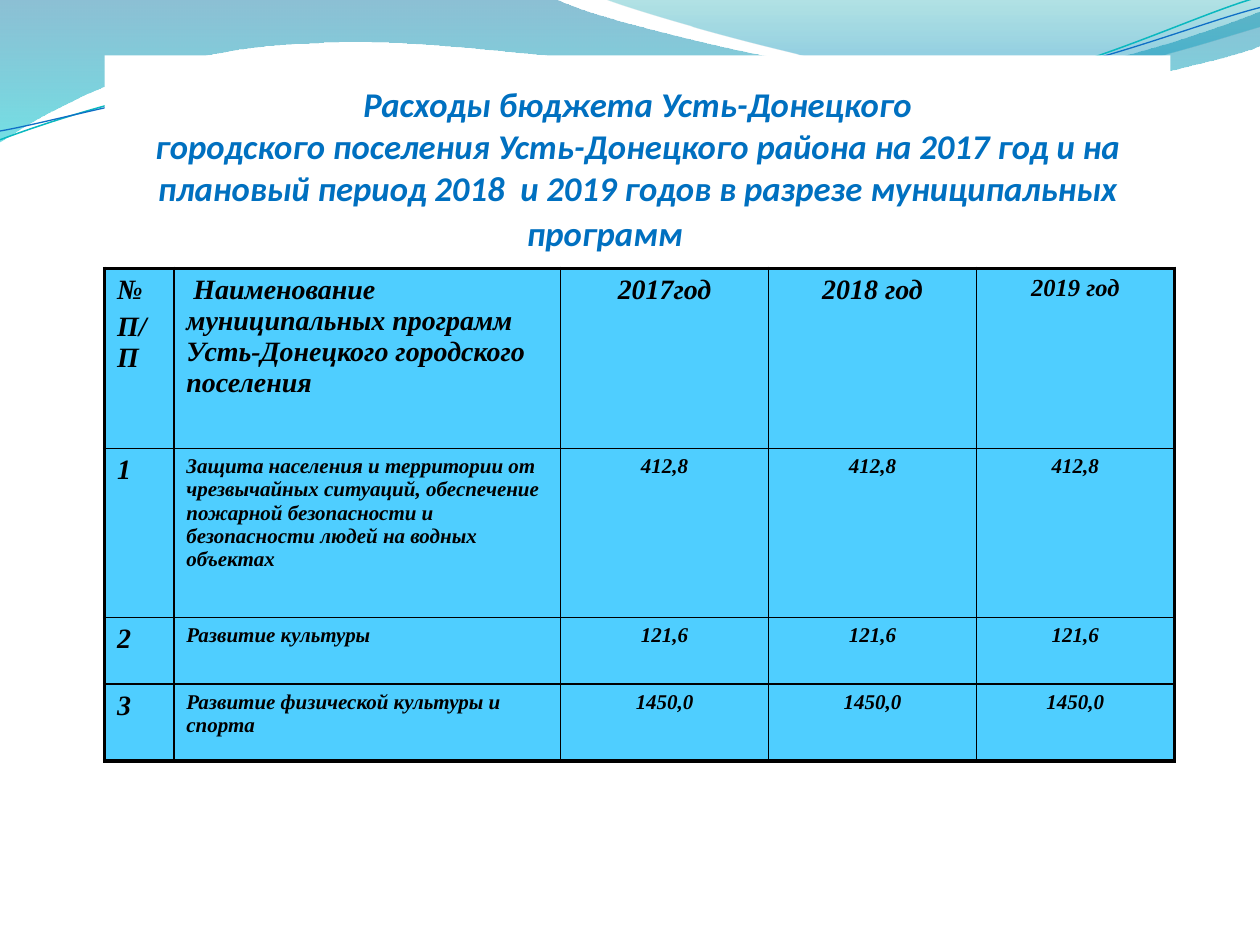
from dataclasses import dataclass

from pptx import Presentation
from pptx.dml.color import RGBColor as Color
from pptx.enum.text import MSO_ANCHOR as Anchor
from pptx.enum.text import MSO_AUTO_SIZE as AutoSize
from pptx.enum.text import PP_ALIGN as Align
from pptx.oxml.ns import qn
from pptx.oxml.xmlchemy import OxmlElement as Node
from pptx.util import Inches, Pt


@dataclass(frozen=True)
class Theme:
    white: str = "FFFFFF"
    black: str = "000000"
    title: str = "0070C0"
    cell: str = "4FCEFF"
    teal_line: str = "0AB8BF"
    blue_line: str = "0F6FC6"
    title_font: str = "Calibri"
    table_font: str = "Times New Roman"
    title_size: float = 19.8
    head_size: float = 16
    last_head_size: float = 14
    body_size: float = 12
    thin: float = 1
    thick: float = 2.25


THEME = Theme()

LARGE_WAVE = [
    [(0, 0)],
    [(4.4, -0.01)],
    [(4.76, 0.17), (6.64, 0.63), (7.58, 0.63)],
    [(8.53, 0.63), (9.58, 0.26), (10, 0.09)],
    [(10.01, 0.36)],
    [(9.83, 0.44), (8.7, 0.76), (7.46, 0.75)],
    [(6.22, 0.75), (3.82, 0.28), (2.57, 0.34)],
    [(1.29, 0.36), (0.46, 0.83), (-0.01, 1.13)],
]
RIGHT_WAVE = [
    [(4.79, -0.01)],
    [(5.09, 0.11), (6.82, 0.62), (7.69, 0.65)],
    [(8.56, 0.69), (9.61, 0.32), (10, 0.21)],
    [(10, 0)],
]
TEAL_CURVE = [
    [(0, 1.11)],
    [(0.48, 0.93), (1.58, 0.57), (2.77, 0.52)],
    [(3.95, 0.47), (5.93, 0.89), (7.13, 0.8)],
    [(8.33, 0.71), (9.38, 0.15), (9.98, -0.02)],
]
BLUE_CURVE = [
    [(0, 1.04)],
    [(0.47, 0.96), (1.64, 0.61), (2.83, 0.56)],
    [(4.03, 0.51), (5.97, 0.84), (7.17, 0.75)],
    [(8.36, 0.67), (9.41, 0.21), (10, 0.06)],
]

TITLE_LINES = [
    "Расходы бюджета Усть-Донецкого",
    "городского поселения Усть-Донецкого района на 2017 год и на "
    "плановый период 2018  и 2019 годов в разрезе муниципальных",
]
TITLE_END = "программ"

HEADINGS = [
    "№\nП/П",
    " Наименование муниципальных программ Усть-Донецкого городского поселения",
    "2017год",
    "2018 год",
    "2019 год",
]
PROGRAMS = [
    ("Защита населения и территории от чрезвычайных ситуаций, обеспечение "
     "пожарной безопасности и безопасности людей на водных объектах", "412,8"),
    ("Развитие культуры", "121,6"),
    ("Развитие физической культуры и спорта", "1450,0"),
]
COLUMN_WIDTHS = [0.55, 3.07, 1.65, 1.65, 1.57]
ROW_HEIGHTS = [1.43, 1.34, 0.53, 0.61]


def add_outline(page, segments, closed):
    points = [(Inches(x), Inches(y)) for segment in segments for x, y in segment]
    builder = page.shapes.build_freeform(*points[0], scale=1.0)
    builder.add_line_segments(points[1:], close=closed)
    shape = builder.convert_to_shape()
    shape.shadow.inherit = False
    outline = next(shape.element.iter(qn("a:path")))
    lines = iter(outline.findall(qn("a:lnTo")))
    for segment in segments[1:]:
        group = [next(lines) for point in segment]
        if len(group) == 3:
            curve = Node("a:cubicBezTo")
            group[0].addprevious(curve)
            for line in group:
                curve.append(line[0])
                outline.remove(line)
    return shape


def add_wave(page, segments, stops):
    shape = add_outline(page, segments, True)
    shape.line.fill.background()
    shape.fill.gradient()
    shape.fill.gradient_angle = 270
    for stop, (position, color, opacity) in zip(shape.fill.gradient_stops, stops):
        stop.position = position
        stop.color.rgb = Color.from_string(color)
        alpha = Node("a:alpha")
        alpha.set("val", str(opacity * 1000))
        next(shape.element.iter(qn("a:gsLst")))[stops.index(
            (position, color, opacity))][0].append(alpha)


def add_curve(page, segments, color, width):
    shape = add_outline(page, segments, False)
    shape.fill.background()
    shape.line.color.rgb = Color.from_string(color)
    shape.line.width = Pt(width)


def add_span(para, text, font, size, color):
    span = para.add_run()
    span.text = text
    span.font.name = font
    span.font.size = Pt(size)
    span.font.bold = span.font.italic = True
    span.font.color.rgb = Color.from_string(color)


def fill_title(page):
    title = page.shapes.title
    title.element.getparent().append(title.element)
    title.left, title.top = Inches(0.83), Inches(0.44)
    title.width, title.height = Inches(8.46), Inches(1.57)
    title.fill.solid()
    title.fill.fore_color.rgb = Color.from_string(THEME.white)
    box = title.text_frame
    box.word_wrap = True
    box.auto_size = AutoSize.NONE
    box.vertical_anchor = Anchor.BOTTOM
    box.margin_left = box.margin_right = box.margin_bottom = 0
    box.margin_top = Inches(0.05)
    style = THEME.title_font, THEME.title_size, THEME.title
    para = box.paragraphs[0]
    for index, line in enumerate(TITLE_LINES):
        if index:
            para.add_line_break()
        add_span(para, line, *style)
    ending = box.add_paragraph()
    ending.space_before = Pt(2)
    add_span(ending, TITLE_END, *style)
    for para in box.paragraphs:
        para.alignment = Align.CENTER
    ending._p.get_or_add_pPr().set("marR", str(Inches(0.52)))


def set_borders(cell, widths):
    properties = cell._tc.get_or_add_tcPr()
    for index, (side, width) in enumerate(widths.items()):
        border = Node(f"a:ln{side}")
        border.set("w", str(Pt(width)))
        fill, color = Node("a:solidFill"), Node("a:srgbClr")
        color.set("val", THEME.black)
        fill.append(color)
        border.append(fill)
        properties.insert(index, border)


def fill_cell(cell, text, size, alignment):
    cell.fill.solid()
    cell.fill.fore_color.rgb = Color.from_string(THEME.cell)
    box = cell.text_frame
    for index, line in enumerate(text.split("\n")):
        para = box.add_paragraph() if index else box.paragraphs[0]
        para.alignment = alignment
        para.space_before = Pt(size * 0.2)
        add_span(para, line, THEME.table_font, size, THEME.black)


def text_size(row, column):
    if column == 0:
        return THEME.head_size
    if row:
        return THEME.body_size
    return THEME.last_head_size if column == len(HEADINGS) - 1 else THEME.head_size


def add_budget_table(page):
    rows = [HEADINGS] + [
        [str(number), name] + [amount] * 3
        for number, (name, amount) in enumerate(PROGRAMS, 1)
    ]
    last_row, last_column = len(rows) - 1, len(HEADINGS) - 1
    table = page.shapes.add_table(
        len(rows), len(HEADINGS), Inches(0.83), Inches(2.13),
        Inches(sum(COLUMN_WIDTHS)), Inches(sum(ROW_HEIGHTS))).table
    table.first_row = table.horz_banding = False
    for column, width in zip(table.columns, COLUMN_WIDTHS):
        column.width = Inches(width)
    for row, height in zip(table.rows, ROW_HEIGHTS):
        row.height = Inches(height)
    for row, values in enumerate(rows):
        for column, text in enumerate(values):
            cell = table.cell(row, column)
            alignment = Align.CENTER if column > 1 else Align.LEFT
            fill_cell(cell, text, text_size(row, column), alignment)
            edges = {"L": column == 0, "R": column == last_column,
                     "T": row == 0, "B": row == last_row}
            set_borders(cell, {side: THEME.thick if outer else THEME.thin
                               for side, outer in edges.items()})


def main():
    deck = Presentation()
    deck.slide_width, deck.slide_height = Inches(10), Inches(7.5)
    page = deck.slides.add_slide(deck.slide_layouts[5])
    add_wave(page, LARGE_WAVE, [(0, "0074A1", 45), (1, "00C6CF", 55)])
    add_wave(page, RIGHT_WAVE, [(0, "00A1A9", 30), (0.8, "008BBF", 45)])
    add_curve(page, TEAL_CURVE, THEME.teal_line, 0.85)
    add_curve(page, BLUE_CURVE, THEME.blue_line, 0.75)
    fill_title(page)
    add_budget_table(page)
    deck.save("out.pptx")


if __name__ == "__main__":
    main()
